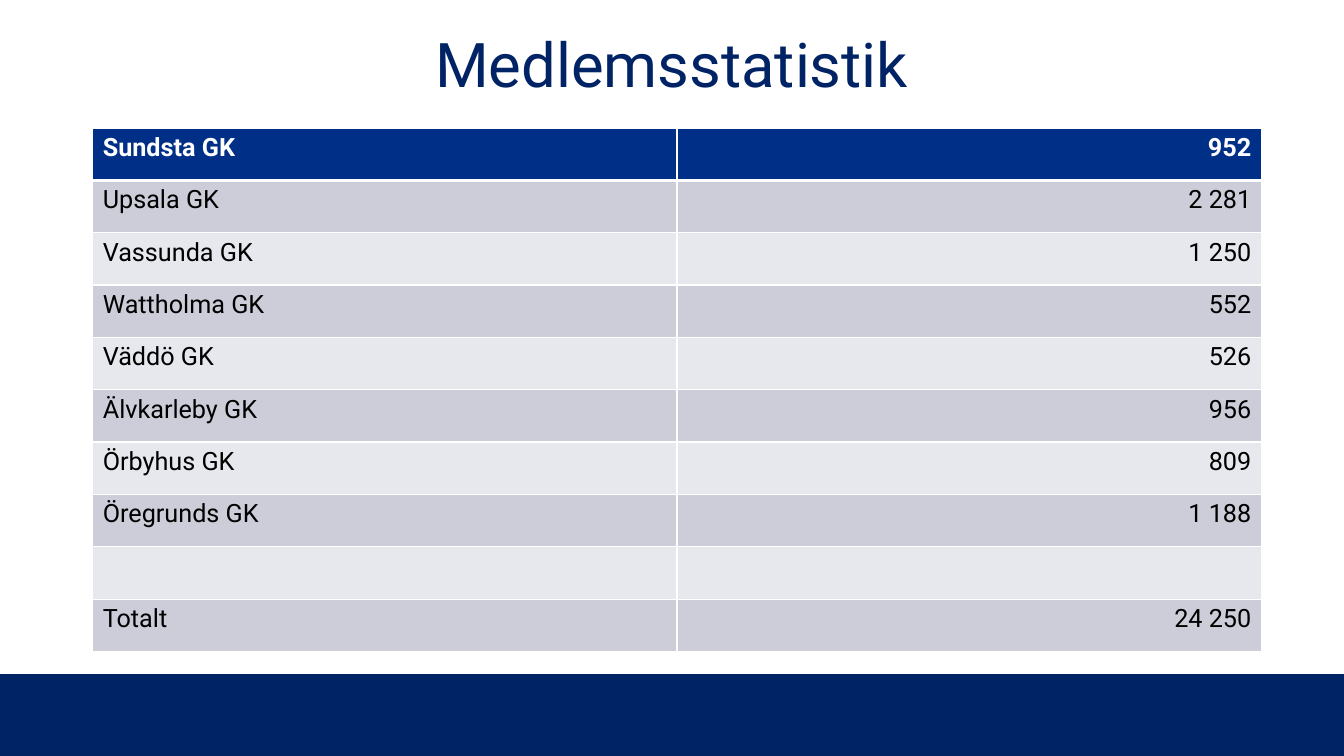
from lxml.etree import SubElement
from pptx import Presentation
from pptx.dml.color import RGBColor
from pptx.enum.shapes import MSO_SHAPE as Shape
from pptx.enum.text import MSO_ANCHOR as Anchor, PP_ALIGN as Align
from pptx.oxml.ns import qn
from pptx.util import Pt

COLORS = {
    "navy": "002365",
    "navy_edge": "002364",
    "header": "002F87",
    "odd": "CCCDD9",
    "even": "E7E8ED",
    "white": "FFFFFF",
    "black": "000000",
}
SLIDE_WIDTH, SLIDE_HEIGHT = 960, 540
MEMBERS = [
    ("Sundsta GK", "952"),
    ("Upsala GK", "2 281"),
    ("Vassunda GK", "1 250"),
    ("Wattholma GK", "552"),
    ("Väddö GK", "526"),
    ("Älvkarleby GK", "956"),
    ("Örbyhus GK", "809"),
    ("Öregrunds GK", "1 188"),
    ("", ""),
    ("Totalt", "24 250"),
]


def rgb(color):
    return RGBColor.from_string(COLORS[color])


class SlideBuilder:
    """Holds the slide and its text style."""

    font_name = "Roboto"

    def __init__(self, slide):
        self.slide = slide

    def style(self, paragraph, size, color, align, bold=False):
        paragraph.alignment = align
        font = paragraph.font
        font.name, font.size, font.bold = self.font_name, Pt(size), bold
        font.color.rgb = rgb(color)

    def band(self, left, top, width, height, fill, edge):
        band = self.slide.shapes.add_shape(
            Shape.RECTANGLE, Pt(left), Pt(top), Pt(width), Pt(height))
        band.shadow.inherit = False
        band.fill.solid()
        band.fill.fore_color.rgb = rgb(fill)
        band.line.color.rgb = rgb(edge)
        band.line.width = Pt(2)

    def title(self, left, top, width, height, text):
        frame = self.slide.shapes.add_textbox(
            Pt(left), Pt(top), Pt(width), Pt(height)).text_frame
        frame.word_wrap = True
        frame.vertical_anchor = Anchor.MIDDLE
        heading = frame.paragraphs[0]
        heading.text = text
        heading.line_spacing = 0.9
        self.style(heading, 44, "navy", Align.CENTER)

    def borders(self, cell, top, bottom):
        """Draw white cell borders; the side borders are 1 point wide."""
        properties = cell._tc.get_or_add_tcPr()
        for side, width in zip("LRTB", (1, 1, top, bottom)):
            line = SubElement(properties, qn(f"a:ln{side}"), w=str(Pt(width)))
            fill = SubElement(line, qn("a:solidFill"))
            SubElement(fill, qn("a:srgbClr"), val=COLORS["white"])

    def table(self, left, top, column_width, row_height, rows):
        columns = len(rows[0])
        table = self.slide.shapes.add_table(
            len(rows), columns, Pt(left), Pt(top),
            Pt(column_width * columns), Pt(row_height * len(rows))).table
        for column in table.columns:
            column.width = Pt(column_width)
        for index, values in enumerate(rows):
            table.rows[index].height = Pt(row_height)
            is_header = index == 0
            fill = "header" if is_header else "odd" if index % 2 else "even"
            color = "white" if is_header else "black"
            for column, value in enumerate(values):
                cell = table.cell(index, column)
                self.borders(cell, top=3 if index == 1 else 1,
                             bottom=3 if is_header else 1)
                cell.fill.solid()
                cell.fill.fore_color.rgb = rgb(fill)
                entry = cell.text_frame.paragraphs[0]
                if value:
                    entry.text = value
                self.style(entry, 18, color,
                           Align.RIGHT if column else Align.LEFT, is_header)


def main():
    presentation = Presentation()
    presentation.slide_width = Pt(SLIDE_WIDTH)
    presentation.slide_height = Pt(SLIDE_HEIGHT)
    builder = SlideBuilder(
        presentation.slides.add_slide(presentation.slide_layouts[6]))
    builder.band(0, 482.4, SLIDE_WIDTH, 57.6, "navy", "navy_edge")
    builder.title(66, 15, 828, 66, "Medlemsstatistik")
    builder.table(66.24, 91.44, 417.4, 37.4, MEMBERS)
    presentation.save("out.pptx")


if __name__ == "__main__":
    main()
